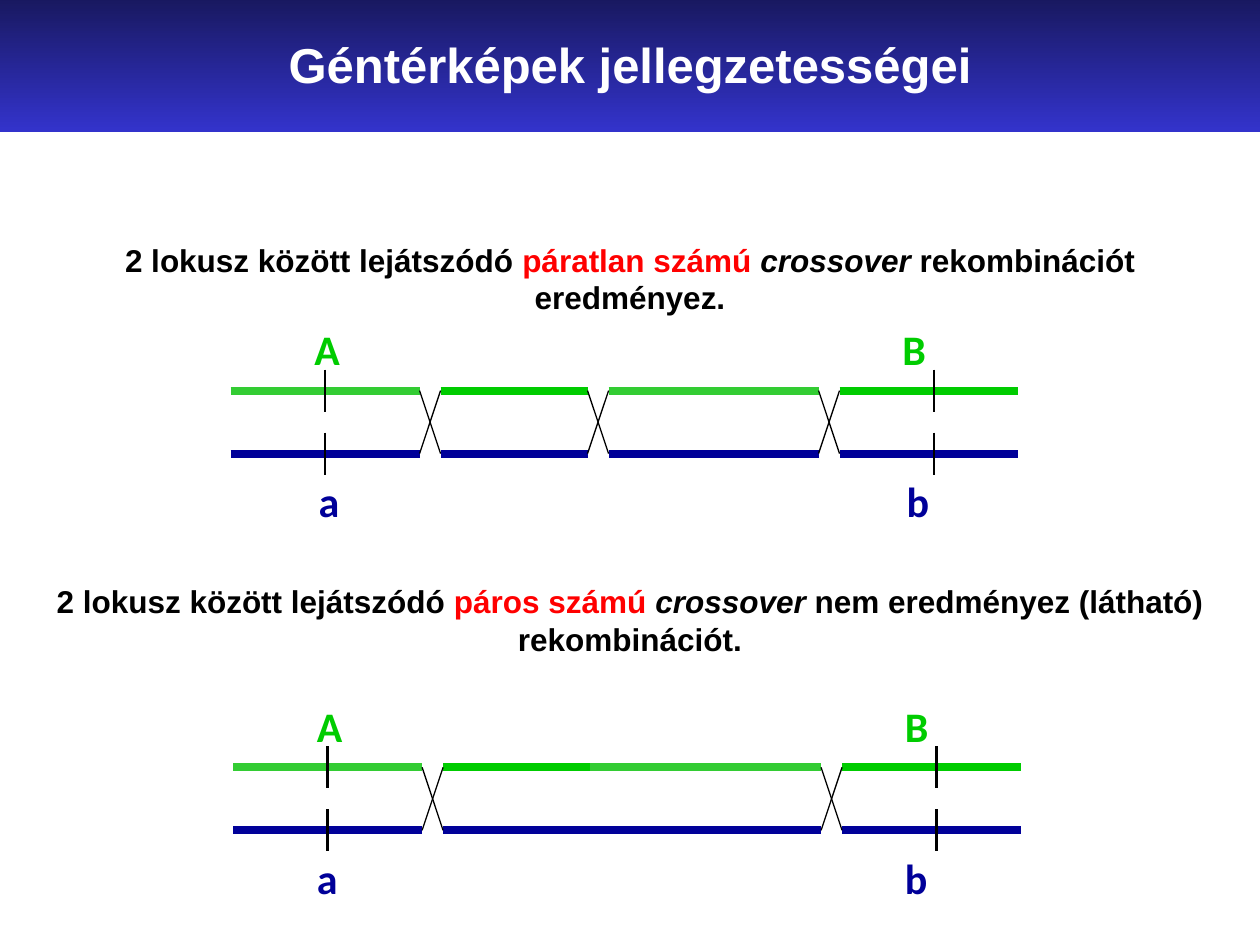
import itertools

import pptx
import pptx.dml.color
import pptx.enum.text
import pptx.oxml
import pptx.oxml.ns
import pptx.util

COLORS = {
    "white": "FFFFFF", "black": "000000", "red": "FF0000",
    "green": "00CC00", "light_green": "33CC33", "blue": "000099",
    "band_top": "18185E", "band_bottom": "3333CC",
}
INCH = pptx.util.Inches
UNIT = 1 / 6
TICKS = (4.5, 33.5)
LABEL_GAP = 28


def rgb(name):
    return pptx.dml.color.RGBColor.from_string(COLORS[name])


def style(run, size, color, font="Arial", italic=False):
    run.font.name = font
    run.font.size = pptx.util.Pt(size)
    run.font.bold = True
    run.font.italic = italic
    run.font.color.rgb = rgb(color)


def place(sp, left, top, width, height):
    sp.left, sp.top, sp.width, sp.height = map(INCH, (left, top, width, height))


def add_title(s, box, text):
    sp = s.shapes.title
    place(sp, *box)
    sp.fill.gradient()
    sp.fill.gradient_angle = 270
    for stop, color in zip(sp.fill.gradient_stops, ("band_top", "band_bottom")):
        stop.color.rgb = rgb(color)
    tf = sp.text_frame
    tf.text = text
    tf.vertical_anchor = pptx.enum.text.MSO_ANCHOR.MIDDLE
    p = tf.paragraphs[0]
    p.alignment = pptx.enum.text.PP_ALIGN.CENTER
    style(p.runs[0], 28, "white")


def add_statements(s, box, statements, gap):
    sp = s.placeholders[1]
    place(sp, *box)
    tf = sp.text_frame
    tf.auto_size = pptx.enum.text.MSO_AUTO_SIZE.NONE
    for i, (number, result) in enumerate(statements):
        p = tf.paragraphs[0] if i == 0 else tf.add_paragraph()
        p.alignment = pptx.enum.text.PP_ALIGN.CENTER
        p.space_before = pptx.util.Pt(gap * i)
        pPr = p._p.get_or_add_pPr()
        pPr.set("marL", "0")
        pPr.set("indent", "0")
        pptx.oxml.ns.qn("a:buNone")
        pPr.append(pptx.oxml.parse_xml(
            f"<a:buNone {pptx.oxml.ns.nsdecls('a')}/>"))
        for text, color, italic in (
            ("2 lokusz között lejátszódó ", "black", False),
            (number + " ", "red", False),
            ("crossover", "black", True),
            (" " + result, "black", False),
        ):
            r = p.add_run()
            r.text = text
            style(r, 18, color, italic=italic)


def add_line(s, start, end, color, width):
    line = s.shapes.add_connector(1, *map(INCH, (*start, *end)))
    line.line.color.rgb = rgb(color)
    line.line.width = pptx.util.Pt(width)
    line._element.spPr.append(pptx.oxml.parse_xml(
        f"<a:effectLst {pptx.oxml.ns.nsdecls('a')}/>"))


def add_labels(s, left, top, letters, color):
    sp = s.shapes.add_textbox(*map(INCH, (left, top, 5.27, 0.5)))
    tf = sp.text_frame
    tf.word_wrap = True
    tf.text = "\t".join(letters)
    p = tf.paragraphs[0]
    p._p.get_or_add_pPr().append(pptx.oxml.parse_xml(
        f"<a:tabLst {pptx.oxml.ns.nsdecls('a')}>"
        f'<a:tab pos="{INCH(LABEL_GAP * UNIT)}" algn="l"/></a:tabLst>'))
    for r in p.runs:
        style(r, 24, color, "Calibri")


def add_chromatids(s, left, top, pieces, lower_label_column):
    def at(column, row):
        return left + column * UNIT, top + row * UNIT

    for (start, end), green in zip(pieces, itertools.cycle(("light_green", "green"))):
        for row, color in ((0, green), (3, "blue")):
            add_line(s, at(start, row), at(end, row), color, 4.5)
    for (_, end), (start, _) in itertools.pairwise(pieces):
        if start > end:
            add_line(s, at(start, 0), at(end, 3), "black", 0.75)
            add_line(s, at(end, 0), at(start, 3), "black", 0.75)
    for column, row in itertools.product(TICKS, (0, 3)):
        add_line(s, at(column, row - 1), at(column, row + 1), "black", 1.5)
    add_labels(s, *at(3.4, -3.5), "AB", "green")
    add_labels(s, *at(lower_label_column, 3.75), "ab", "blue")


def main():
    prs = pptx.Presentation()
    prs.slide_width, prs.slide_height = INCH(10), INCH(7.5)
    s = prs.slides.add_slide(prs.slide_layouts[1])
    add_title(s, (0, -0.03, 10, 1.08), "Géntérképek jellegzetességei")
    add_statements(s, (0.25, 1.86, 9.5, 3.43), (
        ("páratlan számú", "rekombinációt eredményez."),
        ("páros számú", "nem eredményez (látható) rekombinációt."),
    ), 152)
    add_chromatids(s, 1.83, 3.1, ((0, 9), (10, 17), (18, 28), (29, 37.5)), 3.6)
    add_chromatids(s, 1.85, 6.09, ((0, 9), (10, 17), (17, 28), (29, 37.5)), 3.4)
    prs.save("out.pptx")


if __name__ == "__main__":
    main()
